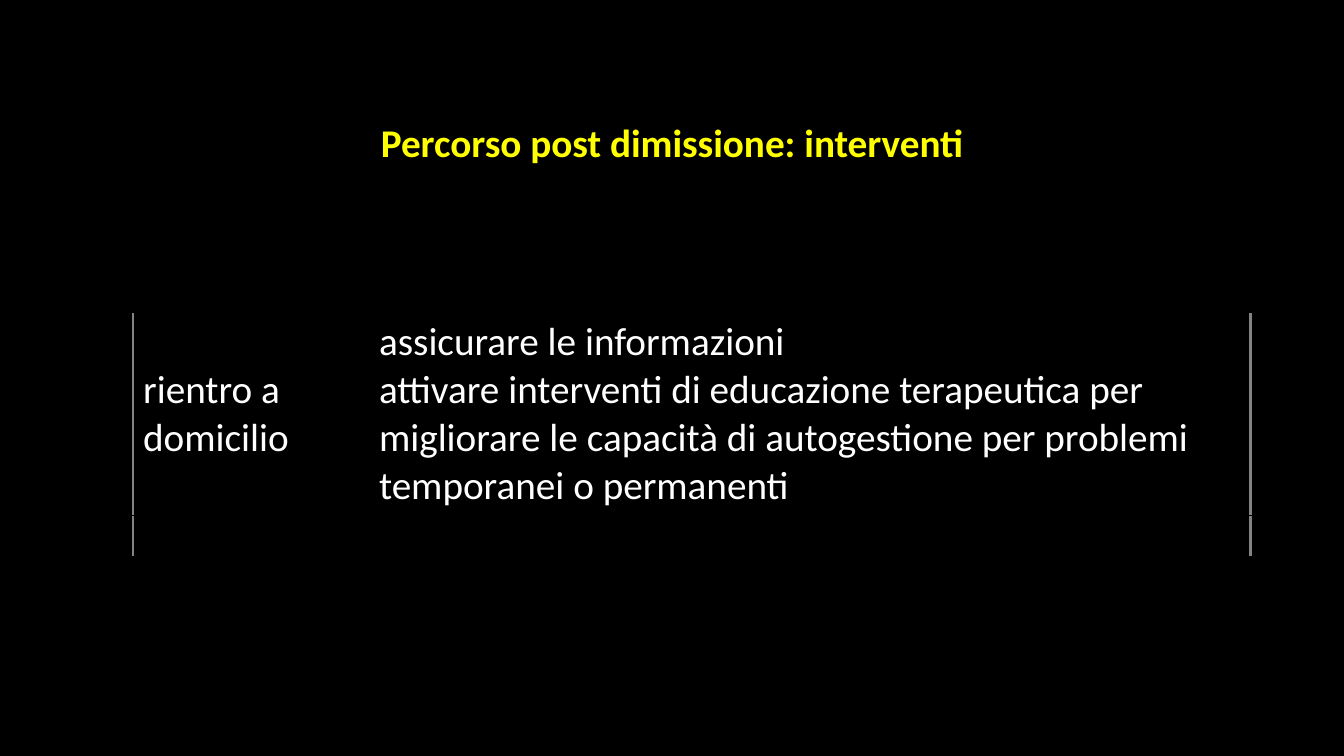
from lxml import etree
from pptx import Presentation
from pptx.dml.color import RGBColor
from pptx.enum.text import MSO_ANCHOR, PP_ALIGN
from pptx.oxml.ns import qn
from pptx.util import Inches, Pt

MIDDLE = MSO_ANCHOR.MIDDLE
CENTER = PP_ALIGN.CENTER
BLACK, WHITE, YELLOW, GREY = "000000", "FFFFFF", "FFFF00", "848282"

TITLE = "Percorso post dimissione: interventi"
ROWS = [
    ["rientro a domicilio",
     "assicurare le informazioni\n"
     "attivare interventi di educazione terapeutica per migliorare le capacità "
     "di autogestione per problemi temporanei o permanenti"],
    ["", ""],
]
WIDTHS = [2.34, 8.74]
HEIGHTS = [1.97, 0.4]


def color(code):
    return RGBColor.from_string(code)


def style(frame, code, bold=False):
    for para in frame.paragraphs:
        for run in para.runs:
            run.font.name = "Calibri"
            run.font.size = Pt(28)
            run.font.bold = bold
            run.font.color.rgb = color(code)


def border(cell, side, code, width):
    line = etree.SubElement(cell._tc.get_or_add_tcPr(), qn("a:ln" + side),
                            w=str(Pt(width)))
    fill = etree.SubElement(line, qn("a:solidFill"))
    etree.SubElement(fill, qn("a:srgbClr"), val=code)


def add_title(slide, left, top, width, height):
    box = slide.shapes.add_textbox(*map(Inches, (left, top, width, height)))
    frame = box.text_frame
    frame.word_wrap = True
    frame.text = TITLE
    frame.paragraphs[0].alignment = CENTER
    style(frame, YELLOW, bold=True)


def add_grid(slide, left, top):
    box = map(Inches, (left, top, sum(WIDTHS), sum(HEIGHTS)))
    table = slide.shapes.add_table(len(ROWS), len(WIDTHS), *box).table
    table.first_row = table.horz_banding = False
    for col, width in zip(table.columns, WIDTHS):
        col.width = Inches(width)
    for row, height in zip(table.rows, HEIGHTS):
        row.height = Inches(height)

    # Grey rules on the outer sides only
    for r, texts in enumerate(ROWS):
        for c, text in enumerate(texts):
            cell = table.cell(r, c)
            cell.text_frame.text = text
            cell.vertical_anchor = MIDDLE
            style(cell.text_frame, WHITE)
            outer = "L" if c == 0 else "R"
            for side in "LRTB":
                if side == outer:
                    border(cell, side, GREY, 2.22)
                else:
                    border(cell, side, BLACK, 0.2)
            cell.fill.background()


def main():
    deck = Presentation()
    deck.slide_width = Inches(13.33)
    deck.slide_height = Inches(7.5)
    slide = deck.slides.add_slide(deck.slide_layouts[6])

    # Black background
    back = slide.background.fill
    back.solid()
    back.fore_color.rgb = color(BLACK)

    add_grid(slide, 1.32, 3.11)
    add_title(slide, 2.83, 1.12, 7.67, 0.57)
    deck.save("out.pptx")


if __name__ == "__main__":
    main()
